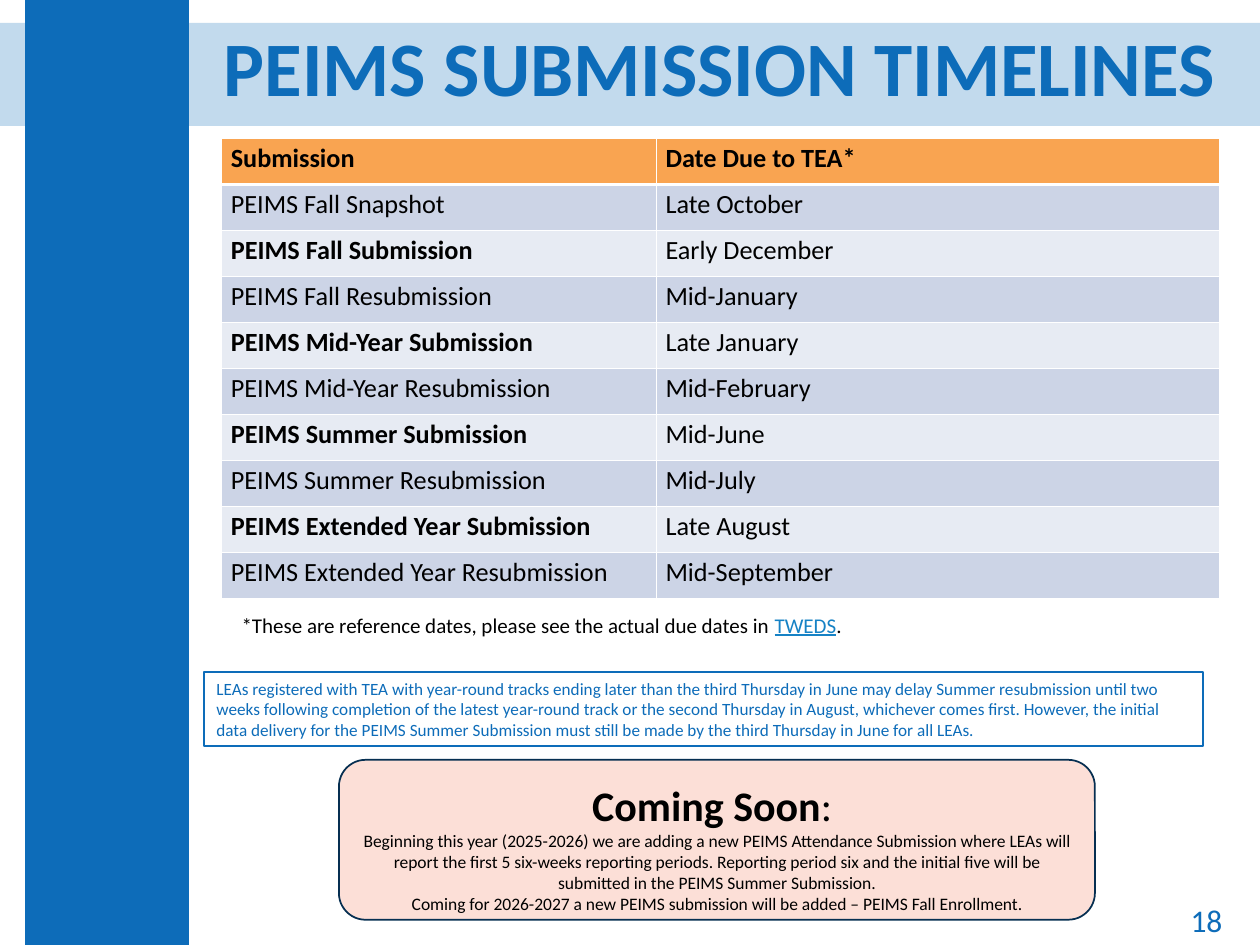
from lxml import etree
from pptx import Presentation
from pptx.dml.color import RGBColor
from pptx.enum.shapes import MSO_SHAPE
from pptx.enum.text import MSO_ANCHOR, PP_ALIGN
from pptx.oxml.ns import qn
from pptx.util import Pt

RECT, ROUND_RECT = MSO_SHAPE.RECTANGLE, MSO_SHAPE.ROUNDED_RECTANGLE
TOP, MIDDLE = MSO_ANCHOR.TOP, MSO_ANCHOR.MIDDLE
LEFT, CENTER, RIGHT = PP_ALIGN.LEFT, PP_ALIGN.CENTER, PP_ALIGN.RIGHT

FONT = "Calibri"
BLUE = RGBColor(0x0D, 0x6C, 0xB9)
NAVY = RGBColor(0x06, 0x2F, 0x51)
LINK = RGBColor(0x16, 0x82, 0xC5)
PINK = RGBColor(0xFC, 0xDF, 0xD7)
ORANGE = RGBColor(0xF9, 0xA4, 0x51)
BAND_DARK = RGBColor(0xCC, 0xD4, 0xE6)
BAND_LIGHT = RGBColor(0xE7, 0xEB, 0xF3)
BLACK = RGBColor(0, 0, 0)

ROWS = [
    ("Submission", "Date Due to TEA*"),
    ("PEIMS Fall Snapshot", "Late October"),
    ("PEIMS Fall Submission", "Early December"),
    ("PEIMS Fall Resubmission", "Mid-January"),
    ("PEIMS Mid-Year Submission", "Late January"),
    ("PEIMS Mid-Year Resubmission", "Mid-February"),
    ("PEIMS Summer Submission", "Mid-June"),
    ("PEIMS Summer Resubmission", "Mid-July"),
    ("PEIMS Extended Year Submission", "Late August"),
    ("PEIMS Extended Year Resubmission", "Mid-September"),
]
YEAR_ROUND = (
    "LEAs registered with TEA with year-round tracks ending later than the third "
    "Thursday in June may delay Summer resubmission until two weeks following "
    "completion of the latest year-round track or the second Thursday in August, "
    "whichever comes first. However, the initial data delivery for the PEIMS Summer "
    "Submission must still be made by the third Thursday in June for all LEAs."
)
ATTENDANCE = (
    "Beginning this year (2025-2026) we are adding a new PEIMS Attendance Submission "
    "where LEAs will report the first 5 six-weeks reporting periods. Reporting period "
    "six and the initial five will be submitted in the PEIMS Summer Submission."
)
ENROLLMENT = (
    "Coming for 2026-2027 a new PEIMS submission will be added – PEIMS Fall Enrollment."
)


def add_run(p, text, size, color=BLACK, bold=False, underline=False):
    """Append one formatted run to a paragraph."""
    r = p.add_run()
    r.text = text
    r.font.name, r.font.size = FONT, Pt(size)
    r.font.bold, r.font.underline = bold, underline
    r.font.color.rgb = color


def add_text(tf, paragraphs, align=LEFT, anchor=TOP):
    """Fill a text frame with paragraphs, each a list of run arguments."""
    tf.word_wrap = True
    tf.vertical_anchor = anchor
    for i, runs in enumerate(paragraphs):
        p = tf.add_paragraph() if i else tf.paragraphs[0]
        p.alignment = align
        for run in runs:
            add_run(p, *run)


def add_box(s, kind, box, fill=None, line=None):
    """Add a preset shape with an optional fill and outline."""
    sp = s.shapes.add_shape(kind, *map(Pt, box))
    sp.shadow.inherit = False
    if fill is None:
        sp.fill.background()
    else:
        sp.fill.solid()
        sp.fill.fore_color.rgb = fill
    if line is None:
        sp.line.fill.background()
    else:
        sp.line.color.rgb = line
        sp.line.width = Pt(1)
    return sp


def add_label(s, box, runs, align=LEFT, anchor=TOP):
    """Add a text box holding one paragraph."""
    tf = s.shapes.add_textbox(*map(Pt, box)).text_frame
    add_text(tf, [runs], align, anchor)


def set_alpha(sp, percent):
    """Set the opacity of a solid fill."""
    color = sp._element.spPr.find(qn("a:solidFill"))[0]
    etree.SubElement(color, qn("a:alpha")).set("val", str(percent * 1000))


def set_borders(cell, widths):
    """Draw white cell borders, with widths given by side."""
    tc_pr = cell._tc.get_or_add_tcPr()
    for side in "LRTB":
        ln = etree.SubElement(tc_pr, qn(f"a:ln{side}"), w=str(Pt(widths.get(side, 0.75))))
        fill = etree.SubElement(ln, qn("a:solidFill"))
        etree.SubElement(fill, qn("a:srgbClr"), val="FFFFFF")


def add_timeline(s, box, col_widths):
    """Add the table of submissions and due dates."""
    table = s.shapes.add_table(len(ROWS), len(col_widths), *map(Pt, box)).table
    for col, width in zip(table.columns, col_widths):
        col.width = Pt(width)
    for i, row in enumerate(ROWS):
        table.rows[i].height = Pt(box[3] / len(ROWS))
        fill = ORANGE if i == 0 else BAND_DARK if i % 2 else BAND_LIGHT
        widths = {0: {"B": 1.97}, 1: {"T": 1.97}}.get(i, {})
        for j, text in enumerate(row):
            cell = table.cell(i, j)
            set_borders(cell, widths)
            cell.fill.solid()
            cell.fill.fore_color.rgb = fill
            cell.margin_left = cell.margin_right = Pt(5.2)
            cell.margin_top = cell.margin_bottom = Pt(2.6)
            p = cell.text_frame.paragraphs[0]
            p.line_spacing = Pt(18)
            add_run(p, text, 15, bold=i == 0 or (j == 0 and i % 2 == 0))


def add_title(s, box, text):
    """Place and fill the title placeholder."""
    sp = s.shapes.title
    sp.left, sp.top, sp.width, sp.height = map(Pt, box)
    add_text(sp.text_frame, [[(text, 44, BLUE, True)]], CENTER, MIDDLE)
    sp.text_frame.paragraphs[0].line_spacing = 0.9


def main():
    """Build the slide and save it."""
    prs = Presentation()
    prs.slide_width, prs.slide_height = Pt(720), Pt(540)
    s = prs.slides.add_slide(prs.slide_layouts[5])

    band = add_box(s, RECT, (0, 13, 720, 59), BLUE)
    set_alpha(band, 25)
    add_box(s, RECT, (14.4, 0, 93.6, 540), BLUE)
    title = s.shapes.title._element
    s.shapes._spTree.append(title)
    add_title(s, (110.9, 23.8, 601.2, 33.8), "PEIMS SUBMISSION TIMELINES")

    note = add_box(s, RECT, (116.6, 383.8, 571, 42.5), line=BLUE)
    add_text(note.text_frame, [[(YEAR_ROUND, 9.8, BLUE)]])
    add_label(s, (543.6, 511.2, 162, 28.8), [("18", 18, BLUE)], RIGHT, MIDDLE)

    soon = add_box(s, ROUND_RECT, (193.7, 434.2, 432, 91.4), PINK, NAVY)
    soon.text_frame.margin_top, soon.text_frame.margin_bottom = Pt(8), Pt(0)
    add_text(soon.text_frame, [
        [("Coming Soon", 24, BLACK, True), (":\u00a0".replace("\u00a0", " "), 24)],
        [(ATTENDANCE, 10)],
        [(ENROLLMENT, 10)],
    ], CENTER, MIDDLE)

    add_timeline(s, (126.7, 79.2, 570.2, 262.8), (248.4, 321.8))
    add_label(s, (131, 346.3, 563.8, 21.6), [
        ("*These are reference dates, please see the actual due dates in ", 12),
        ("TWEDS", 12, LINK, False, True),
        (".", 12),
    ])
    prs.save("out.pptx")


if __name__ == "__main__":
    main()
